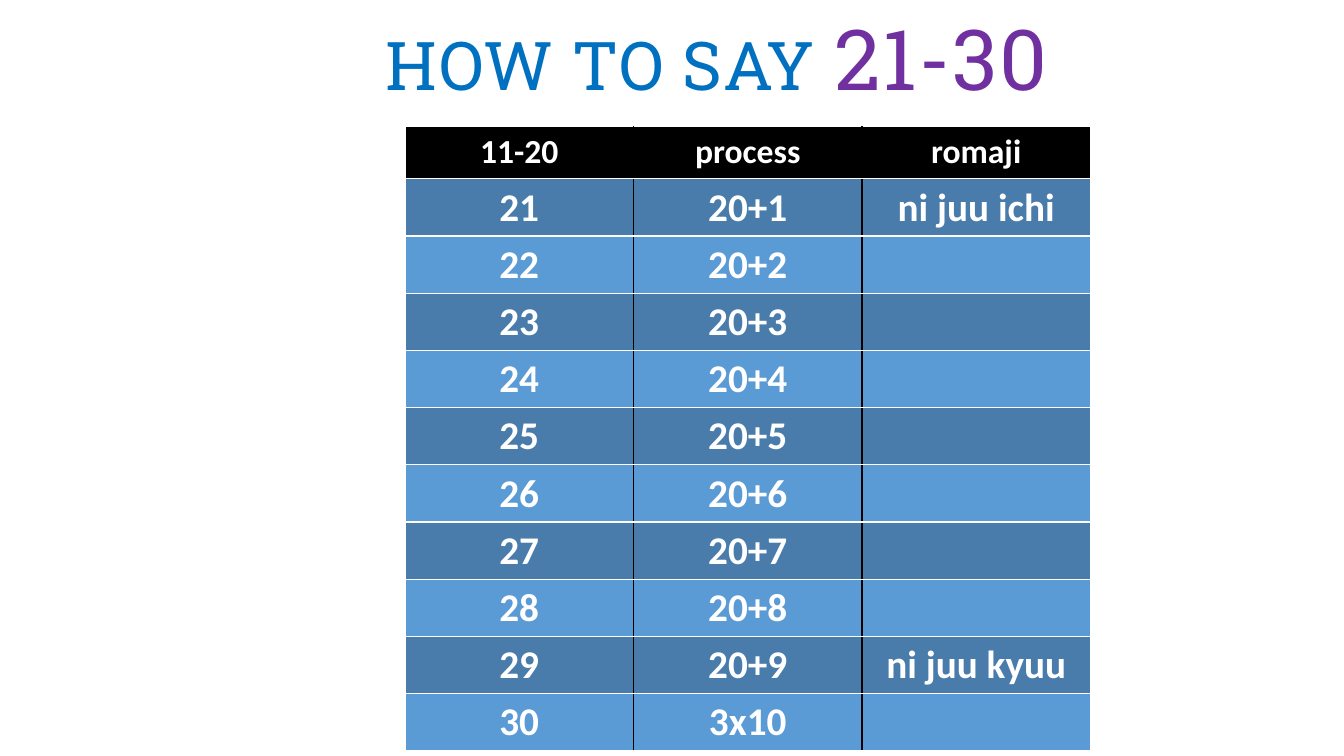
import pptx
import pptx.dml.color
import pptx.enum.text
import pptx.oxml.ns
import pptx.util
from lxml import etree

Pt = pptx.util.Pt
RGBColor = pptx.dml.color.RGBColor

BLUE = RGBColor(0x00, 0x70, 0xC0)
PURPLE = RGBColor(0x70, 0x30, 0xA0)
BLACK = RGBColor(0x00, 0x00, 0x00)
WHITE = RGBColor(0xFF, 0xFF, 0xFF)
DARK_BAND = RGBColor(0x49, 0x7C, 0xAB)
LIGHT_BAND = RGBColor(0x5B, 0x9B, 0xD5)

TITLE = [("HOW TO SAY ", 48, BLUE), ("21-30", 60, PURPLE)]
ROWS = [
    ("11-20", "process", "romaji"),
    ("21", "20+1", "ni juu ichi"),
    ("22", "20+2", ""),
    ("23", "20+3", ""),
    ("24", "20+4", ""),
    ("25", "20+5", ""),
    ("26", "20+6", ""),
    ("27", "20+7", ""),
    ("28", "20+8", ""),
    ("29", "20+9", "ni juu kyuu"),
    ("30", "3x10", ""),
]
COLUMN_WIDTH = 163.2
ROW_HEIGHT = 37.2


def add_title(slide):
    box = slide.shapes.add_textbox(Pt(268.6), Pt(1.4), Pt(530.6), Pt(80))
    box.text_frame.word_wrap = True
    paragraph = box.text_frame.paragraphs[0]
    for text, size, color in TITLE:
        run = paragraph.add_run()
        run.text = text
        run.font.name = "Roboto Slab"
        run.font.size = Pt(size)
        run.font.color.rgb = color
        run.font._element.set("spc", "100")


def add_border(cell, side):
    """Draw a 1 pt black line on one side (L or R) of the cell."""
    properties = cell._tc.get_or_add_tcPr()
    line = etree.SubElement(properties, pptx.oxml.ns.qn(f"a:ln{side}"), w=str(Pt(1)))
    fill = etree.SubElement(line, pptx.oxml.ns.qn("a:solidFill"))
    etree.SubElement(fill, pptx.oxml.ns.qn("a:srgbClr"), val=str(BLACK))


def add_number_table(slide):
    column_count = len(ROWS[0])
    table = slide.shapes.add_table(
        len(ROWS), column_count, Pt(289.3), Pt(90.6),
        Pt(COLUMN_WIDTH * column_count), Pt(ROW_HEIGHT * len(ROWS)),
    ).table
    for column in table.columns:
        column.width = Pt(COLUMN_WIDTH)
    for row_index, texts in enumerate(ROWS):
        table.rows[row_index].height = Pt(ROW_HEIGHT)
        band = DARK_BAND if row_index % 2 else LIGHT_BAND
        for column_index, text in enumerate(texts):
            cell = table.cell(row_index, column_index)
            if column_index > 0:
                add_border(cell, "L")
            if column_index < column_count - 1:
                add_border(cell, "R")
            cell.fill.solid()
            cell.fill.fore_color.rgb = band if row_index else BLACK
            cell.text = text
            paragraph = cell.text_frame.paragraphs[0]
            paragraph.alignment = pptx.enum.text.PP_ALIGN.CENTER
            paragraph.font.name = "Calibri"
            paragraph.font.size = Pt(28 if row_index else 24)
            paragraph.font.bold = True
            paragraph.font.color.rgb = WHITE


def main():
    presentation = pptx.Presentation()
    presentation.slide_width = Pt(960)
    presentation.slide_height = Pt(540)
    slide = presentation.slides.add_slide(presentation.slide_layouts[6])
    add_title(slide)
    add_number_table(slide)
    presentation.save("out.pptx")


if __name__ == "__main__":
    main()
